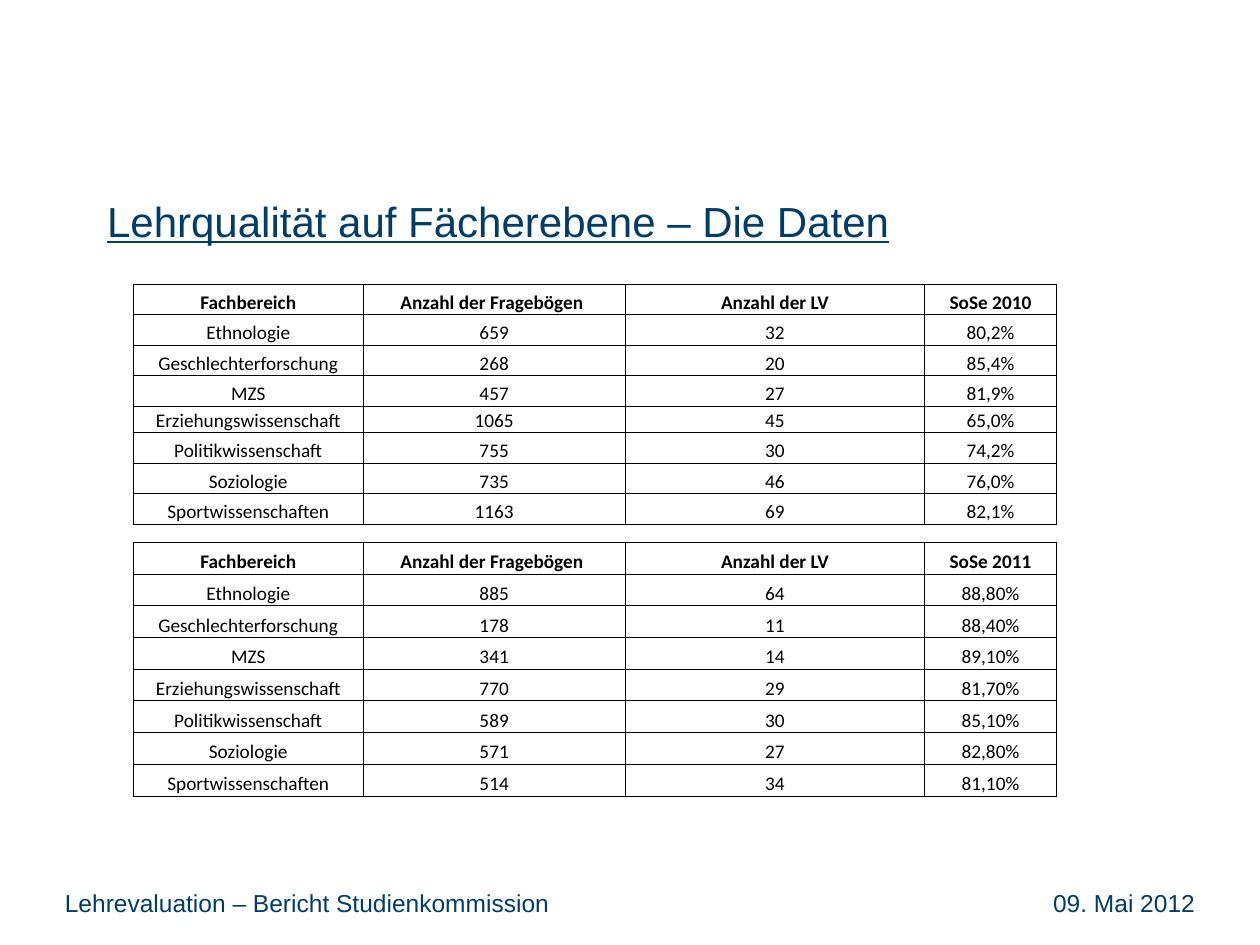
from dataclasses import dataclass

from lxml.etree import SubElement
from pptx import Presentation
from pptx.dml.color import RGBColor
from pptx.enum.text import MSO_ANCHOR, PP_ALIGN
from pptx.oxml.ns import qn
from pptx.util import Pt


@dataclass(frozen=True)
class Theme:
    accent: str = "003C68"
    ink: str = "000000"
    text_font: str = "Arial"
    table_font: str = "Calibri"
    title_size: float = 24
    footer_size: float = 14
    table_size: float = 11
    rule: float = 0.5
    thick_rule: float = 1


class SlideBuilder:
    def __init__(self, slide, theme):
        self.s = slide
        self.theme = theme

    def style(self, p, font, size, color, align=PP_ALIGN.LEFT, bold=False):
        p.alignment = align
        p.font.name = font
        p.font.size = Pt(size)
        p.font.bold = bold
        p.font.color.rgb = RGBColor.from_string(color)

    def title(self, text, left, top, width, height):
        sp = self.s.shapes.title
        sp.left, sp.top, sp.width, sp.height = map(Pt, (left, top, width, height))
        tf = sp.text_frame
        tf.text = text
        tf.vertical_anchor = MSO_ANCHOR.MIDDLE
        p = tf.paragraphs[0]
        self.style(p, self.theme.text_font, self.theme.title_size, self.theme.accent)
        p.font.underline = True

    def footer(self, text, left, top, width, height, align=PP_ALIGN.LEFT):
        sp = self.s.shapes.add_textbox(*map(Pt, (left, top, width, height)))
        tf = sp.text_frame
        tf.word_wrap = True
        tf.text = text
        self.style(tf.paragraphs[0], self.theme.text_font,
                   self.theme.footer_size, self.theme.accent, align)

    def borders(self, cell, left_width):
        tc_pr = cell._tc.get_or_add_tcPr()
        for i, side in enumerate("LRTB"):
            width = left_width if side == "L" else self.theme.rule
            ln = tc_pr.makeelement(qn(f"a:ln{side}"), {"w": str(Pt(width))})
            fill = SubElement(ln, qn("a:solidFill"))
            SubElement(fill, qn("a:srgbClr"), val=self.theme.ink)
            tc_pr.insert(i, ln)  # borders come before the cell fill

    def table(self, rows, left, top, col_widths, row_heights, thick_row=None):
        frame = self.s.shapes.add_table(
            len(rows), len(col_widths), Pt(left), Pt(top),
            Pt(sum(col_widths)), Pt(sum(row_heights)))
        table = frame.table
        table.first_row = table.horz_banding = False
        for column, width in zip(table.columns, col_widths):
            column.width = Pt(width)
        for r, (values, height) in enumerate(zip(rows, row_heights)):
            table.rows[r].height = Pt(height)
            for c, value in enumerate(values):
                cell = table.cell(r, c)
                cell.text = value
                cell.fill.background()
                cell.vertical_anchor = MSO_ANCHOR.BOTTOM
                cell.margin_left = cell.margin_right = 0
                cell.margin_top = cell.margin_bottom = 0
                self.style(cell.text_frame.paragraphs[0], self.theme.table_font,
                           self.theme.table_size, self.theme.ink,
                           PP_ALIGN.CENTER, bold=r == 0)
                thick = r == thick_row and c == 0
                self.borders(cell, self.theme.thick_rule if thick else self.theme.rule)


SUBJECTS = ["Ethnologie", "Geschlechterforschung", "MZS", "Erziehungswissenschaft",
            "Politikwissenschaft", "Soziologie", "Sportwissenschaften"]

# Per subject: questionnaires, courses, quality score
DATA_2010 = [("659", "32", "80,2%"), ("268", "20", "85,4%"), ("457", "27", "81,9%"),
             ("1065", "45", "65,0%"), ("755", "30", "74,2%"), ("735", "46", "76,0%"),
             ("1163", "69", "82,1%")]
DATA_2011 = [("885", "64", "88,80%"), ("178", "11", "88,40%"), ("341", "14", "89,10%"),
             ("770", "29", "81,70%"), ("589", "30", "85,10%"), ("571", "27", "82,80%"),
             ("514", "34", "81,10%")]


def semester_rows(semester, data):
    header = ("Fachbereich", "Anzahl der Fragebögen ", "Anzahl der LV", semester)
    return [header] + [(name, *values) for name, values in zip(SUBJECTS, data)]


def main():
    prs = Presentation()
    prs.slide_width, prs.slide_height = Pt(720), Pt(540)
    slide = SlideBuilder(prs.slides.add_slide(prs.slide_layouts[5]), Theme())

    # Title
    slide.title("Lehrqualität auf Fächerebene – Die Daten", 54, 108, 612, 36)

    # Footer
    slide.footer("09. Mai 2012", 540, 504, 150, 36, PP_ALIGN.RIGHT)
    slide.footer("Lehrevaluation – Bericht Studienkommission", 30, 504, 330, 36)

    # One table per semester, on the same columns
    left, col_widths = 76.4, [131, 150, 171, 75.4]
    special = SUBJECTS.index("Erziehungswissenschaft") + 1
    heights = [17.45] * 8
    heights[special] = 15.2
    slide.table(semester_rows("SoSe 2010", DATA_2010), left, 162.3,
                col_widths, heights, thick_row=special)
    slide.table(semester_rows("SoSe 2011", DATA_2011), left, 309.9,
                col_widths, [18.14] * 8)

    prs.save("out.pptx")


if __name__ == "__main__":
    main()
